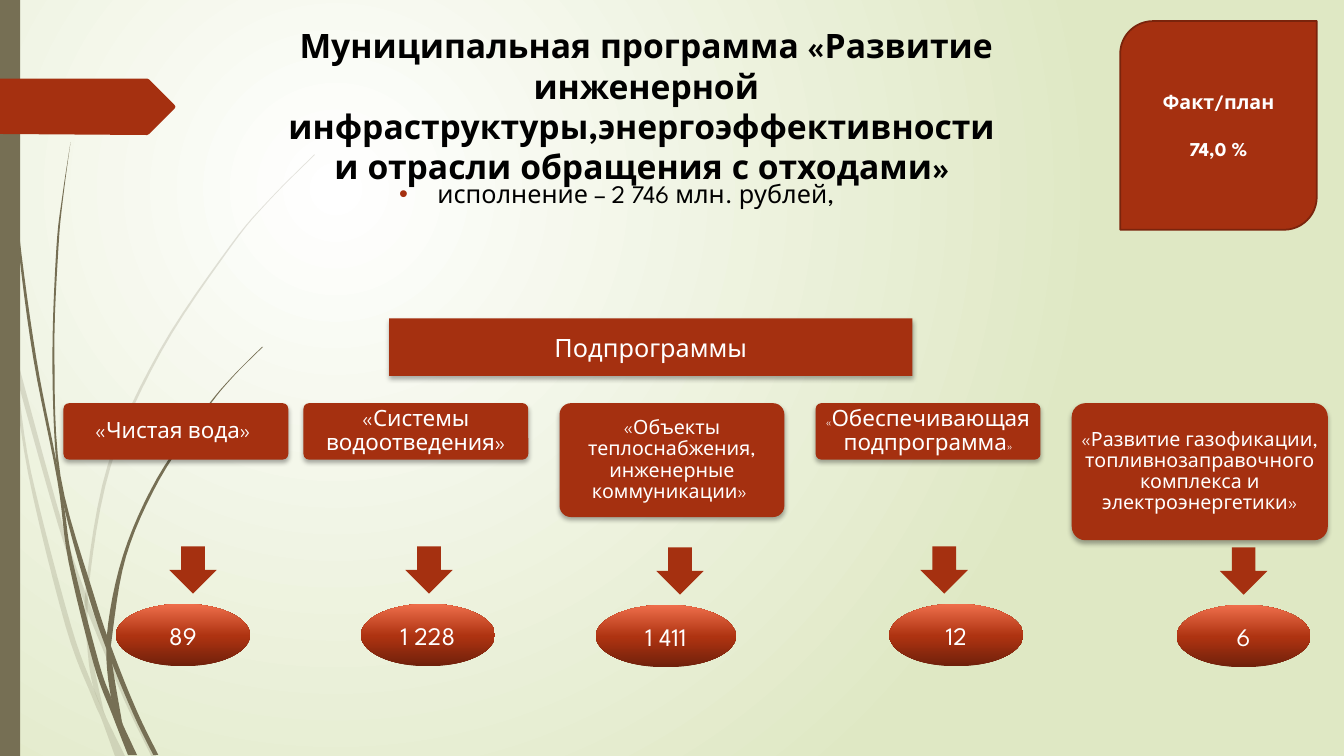
from lxml.etree import SubElement, fromstring
from pptx import Presentation
from pptx.dml.color import RGBColor
from pptx.enum.shapes import MSO_SHAPE
from pptx.enum.text import MSO_ANCHOR, MSO_AUTO_SIZE, PP_ALIGN
from pptx.oxml.ns import nsdecls, qn
from pptx.util import Inches, Pt

FONT = "League Spartan"
RUST, OLIVE, WHITE, BLACK = "A53010", "766F54", "FFFFFF", "000000"

STRANDS = [
    (20, [(0, 2.99), (0.1, 3.44), (0.17, 3.76), (0.58, 5.22), (0.84, 5.99), (0.88, 6.1), (1.23, 6.94), (1.5, 7.5)],
     [(1.55, 7.5), (1.27, 6.92), (0.92, 6.07), (0.62, 5.2), (0.14, 3.45), (0.09, 3.22), (0, 2.82)]),
    (20, [(0.11, 3.5), (0.28, 4.7), (0.65, 6.21), (0.92, 6.93), (1.01, 7.14), (1.14, 7.5)],
     [(1.24, 7.5), (1.05, 7.11), (0.93, 6.83), (0.7, 6.19), (0.31, 4.69), (0.17, 3.76), (0.11, 3.5)]),
    (20, [(3.12, 1.53), (2.68, 1.97), (2.28, 2.44), (1.58, 3.48), (1.07, 4.61), (0.85, 5.84), (0.87, 6.46),
          (0.93, 6.83), (1.05, 7.11)],
     [(1.03, 7.06), (0.91, 6.46), (0.88, 5.84), (1.1, 4.62), (1.6, 3.49), (2.29, 2.45), (2.68, 1.98), (3.12, 1.54)]),
    (100, [(0.03, 0), (0.07, 1.1), (0.17, 2.33), (0.33, 3.55), (0.57, 4.77), (0.68, 5.57), (0.93, 6.59),
           (1.11, 7.08), (1.27, 7.49)],
     [(1.36, 7.49), (1.22, 7.19), (1.1, 6.91), (0.98, 6.57), (0.72, 5.56), (0.64, 5.05), (0.55, 4.53),
      (0.36, 3.55), (0.19, 2.32), (0.08, 1.09), (0.04, 0)]),
    (100, [(0.7, 1.41), (0.62, 1.93), (0.56, 2.45), (0.52, 3.49), (0.55, 4.49), (0.64, 5.05), (0.88, 5.92),
           (1.06, 6.45), (1.32, 7.08), (1.52, 7.49)],
     [(1.57, 7.49), (1.36, 7.06), (1.13, 6.49), (0.93, 5.9), (0.6, 4.72), (0.54, 3.49), (0.58, 2.45),
      (0.63, 1.93), (0.7, 1.41)]),
    (100, [(2.6, 3.44), (2.31, 3.73), (2.04, 4.05), (1.56, 4.74), (1.22, 5.51), (1.06, 6.31), (1.1, 6.91),
           (1.22, 7.19)],
     [(1.21, 7.16), (1.11, 6.56), (1.11, 6.33), (1.25, 5.52), (1.58, 4.76), (2.05, 4.06), (2.31, 3.74), (2.61, 3.44)]),
]

SUBPROGRAMS = [
    ((0.63, 4, 2.23, 0.56), [("«Чистая вода» ", 16)], 1.68, (1.15, 5.99, 1.33, 0.62), "89"),
    ((3.01, 4, 2.23, 0.56), [("«Системы водоотведения»", 16)], 4.02, (3.58, 5.99, 1.33, 0.62), "1 228"),
    ((5.55, 4, 2.23, 1.13), [("«Объекты теплоснабжения, инженерные коммуникации» ", 14)],
     6.51, (5.91, 6, 1.39, 0.62), "1 411"),
    ((8.09, 4, 2.23, 0.56), [("«", 8), ("Обеспечивающая подпрограмма", 16), ("»", 8)],
     9.13, (8.82, 5.99, 1.33, 0.62), "12"),
    ((10.63, 4, 2.54, 1.36), [("«Развитие газофикации, топливнозаправочного комплекса и электроэнергетики»", 14)],
     12.1, (11.67, 6, 1.33, 0.62), "6"),
]


def rgb(value):
    """Turn a hex string into a colour."""
    return RGBColor.from_string(value)


def apply(obj, **values):
    """Set attributes from a dict of format values."""
    for name, value in values.items():
        setattr(obj, name, value)


def place(shape, box):
    """Move a shape to a box given in inches."""
    apply(shape, **dict(zip(("left", "top", "width", "height"), map(Inches, box))))


def write(p, runs, color=WHITE, bold=False, **fmt):
    """Fill a paragraph with (text, size) runs."""
    apply(p, **{"alignment": PP_ALIGN.CENTER, **fmt})
    for text, size in runs:
        r = p.add_run()
        r.text = text
        apply(r.font, name=FONT, size=Pt(size), bold=bold)
        r.font.color.rgb = rgb(color)


def gradient(element, stops, direction):
    """Replace the empty fill of an element with a gradient."""
    marks = "".join(f'<a:gs pos="{pos * 1000}"><a:srgbClr val="{color}"/></a:gs>' for pos, color in stops)
    old = element.find(".//" + qn("a:noFill"))
    new = fromstring(f'<a:gradFill {nsdecls("a")} rotWithShape="1"><a:gsLst>{marks}</a:gsLst>{direction}</a:gradFill>')
    old.getparent().replace(old, new)


def finish(shape, color, alpha=100):
    """Give a shape a flat fill with no line or shadow."""
    shape.shadow.inherit = False
    shape.fill.solid()
    shape.fill.fore_color.rgb = rgb(color)
    shape.line.fill.background()
    if alpha < 100:
        tint = shape._element.spPr.find(".//" + qn("a:srgbClr"))
        SubElement(tint, qn("a:alpha"), val=str(alpha * 1000))


def block(s, kind, box, color=RUST, shadow=False, margin=None):
    """Add a filled preset shape."""
    sp = s.shapes.add_shape(kind, *map(Inches, box))
    finish(sp, color)
    if shadow:
        effects = sp._element.spPr.find(qn("a:effectLst"))
        outer = SubElement(effects, qn("a:outerShdw"), blurRad=str(Pt(3.5)), dist=str(Pt(2.2)),
                           dir="5400000", rotWithShape="0")
        SubElement(SubElement(outer, qn("a:srgbClr"), val=BLACK), qn("a:alpha"), val="32000")
    tf = sp.text_frame
    apply(tf, word_wrap=True, vertical_anchor=MSO_ANCHOR.MIDDLE)
    if margin is not None:
        apply(tf, **{f"margin_{side}": Inches(margin) for side in ("left", "top", "right", "bottom")})
    return sp


def smooth(points, steps=6):
    """Return points along a smooth curve through the given ones."""
    ends = [points[0], *points, points[-1]]
    curve = []
    for a, b, c, d in zip(ends, ends[1:], ends[2:], ends[3:]):
        for t in (i / steps for i in range(steps)):
            curve.append(tuple(0.5 * (2 * q + (r - o) * t + (2 * o - 5 * q + 4 * r - u) * t ** 2
                                      + (3 * q - o - 3 * r + u) * t ** 3) for o, q, r, u in zip(a, b, c, d)))
    return curve + [points[-1]]


def outline(s, points, color, alpha=100):
    """Add a closed filled outline."""
    start, *rest = [(Inches(x), Inches(y)) for x, y in points]
    builder = s.shapes.build_freeform(*start, scale=1.0)
    builder.add_line_segments(rest, close=True)
    finish(builder.convert_to_shape(), color, alpha)


def backdrop(s, height):
    """Draw the background, the grass strands, the side bar and the flag."""
    s.background.fill.background()
    gradient(s._element, [(0, WHITE), (100, "DFE8C4")],
             '<a:path path="circle"><a:fillToRect l="50000" t="50000" r="100000" b="100000"/></a:path>')
    for alpha, left, right in STRANDS:
        outline(s, smooth(left) + smooth(right), OLIVE, alpha)
    block(s, MSO_SHAPE.RECTANGLE, (0, 0, 0.2, height), OLIVE)
    outline(s, [(0, 0.78), (1.46, 0.78), (1.48, 0.79), (1.73, 1.04), (1.74, 1.06), (1.73, 1.08),
                (1.48, 1.33), (1.46, 1.34), (0, 1.33)], RUST)


def heading(s, box):
    """Place the title and the bullet line under it."""
    x, y, w, h = box
    title = s.shapes.title
    place(title, box)
    tf = title.text_frame
    apply(tf, auto_size=MSO_AUTO_SIZE.NONE, word_wrap=True, vertical_anchor=MSO_ANCHOR.TOP)
    p = tf.paragraphs[0]
    write(p, [("Муниципальная программа «Развитие инженерной инфраструктуры,энергоэффективности ", 24)], BLACK, True)
    p.add_line_break()
    write(p, [("и отрасли обращения с отходами» ", 24)], BLACK, True)
    tf = s.shapes.add_textbox(*map(Inches, (x + 2.09, y + 1.52, 5.19, 1.7))).text_frame
    tf.word_wrap = True
    p = tf.paragraphs[0]
    pPr = p._p.get_or_add_pPr()
    apply_indent = {"marL": Inches(0.38), "indent": Inches(-0.38)}
    for name, value in apply_indent.items():
        pPr.set(name, str(value))
    SubElement(SubElement(pPr, qn("a:buClr")), qn("a:srgbClr"), val=RUST)
    SubElement(pPr, qn("a:buFont"), typeface="Arial")
    SubElement(pPr, qn("a:buChar"), char="•")
    write(p, [("исполнение – 2 746 млн. рублей,", 18)], BLACK, alignment=PP_ALIGN.LEFT)


def badge(s, box):
    """Draw the completion badge."""
    sp = block(s, MSO_SHAPE.ROUND_2_DIAG_RECTANGLE, box)
    sp.line.color.rgb = rgb("7A240C")
    sp.line.width = Pt(1.25)
    tf = sp.text_frame
    write(tf.paragraphs[0], [("Факт/план", 14)], bold=True)
    write(tf.add_paragraph(), [("74,0 %", 14)], bold=True, space_before=Pt(17))


def subprogram(s, box, runs, arrow_left, oval_box, amount):
    """Draw one card with its arrow and amount."""
    card = block(s, MSO_SHAPE.ROUNDED_RECTANGLE, box, shadow=True, margin=0.02)
    card.adjustments[0] = 0.1
    write(card.text_frame.paragraphs[0], runs, line_spacing=0.9)
    block(s, MSO_SHAPE.DOWN_ARROW, (arrow_left, oval_box[1] - 0.57, 0.47, 0.47))
    oval = block(s, MSO_SHAPE.OVAL, oval_box)
    oval.fill.background()
    gradient(oval._element.spPr, [(0, "6F200B"), (48, "AE3311"), (100, "EE6E4B")],
             '<a:lin ang="16200000" scaled="0"/>')
    write(oval.text_frame.paragraphs[0], [(amount, 18)])


def main():
    """Build and save the slide."""
    prs = Presentation()
    apply(prs, slide_width=Inches(13.33), slide_height=Inches(7.5))
    s = prs.slides.add_slide(prs.slide_layouts[5])
    backdrop(s, 7.5)
    banner = block(s, MSO_SHAPE.RECTANGLE, (3.86, 3.16, 5.19, 0.57), shadow=True)
    write(banner.text_frame.paragraphs[0], [("Подпрограммы", 18)])
    for item in SUBPROGRAMS:
        subprogram(s, *item)
    heading(s, (1.77, 0.2, 9.28, 0.85))
    badge(s, (11.11, 0.21, 1.95, 2.07))
    prs.save("out.pptx")


if __name__ == "__main__":
    main()
